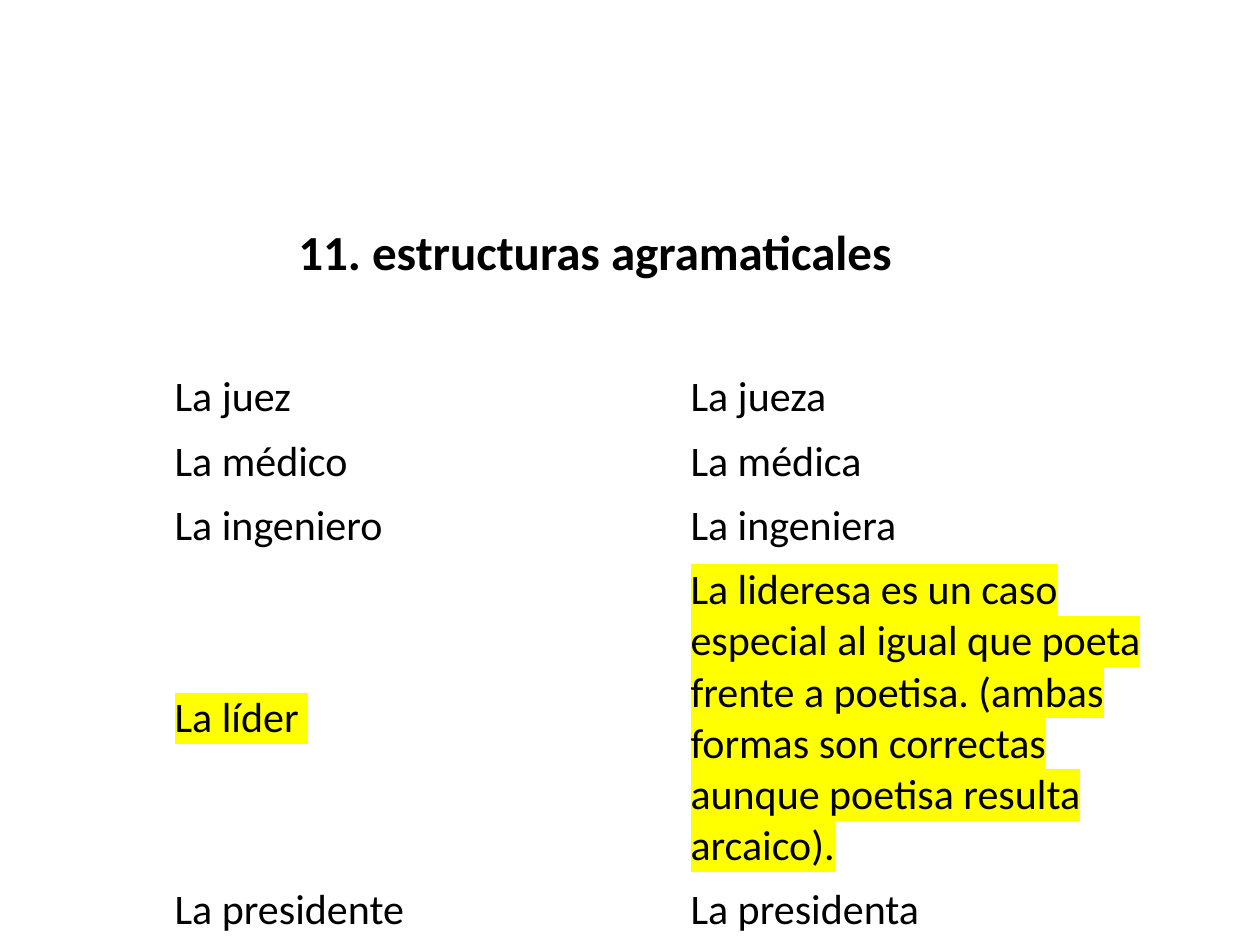
from dataclasses import dataclass

from lxml.etree import SubElement
from pptx import Presentation
from pptx.dml.color import RGBColor
from pptx.enum.text import MSO_ANCHOR, PP_ALIGN
from pptx.oxml.ns import qn
from pptx.util import Cm, Pt

COLORS = {"text": "000000", "highlight": "FFFF00"}
TITLE_FONT = {"name": "Calibri", "size": Pt(28), "bold": True}
CELL_FONT = {"name": "Calibri", "size": Pt(24), "bold": False}
CELL_FORMAT = {
    "vertical_anchor": MSO_ANCHOR.MIDDLE,
    "margin_left": Cm(0.25),
    "margin_right": Cm(0.25),
    "margin_top": Cm(0.13),
    "margin_bottom": Cm(0.13),
}
TITLE_BOX = {"left": Cm(1.3), "top": Cm(3.73), "width": Cm(21.39), "height": Cm(2.64)}
COLUMN_WIDTHS = (Cm(10.4), Cm(10.98))
EMPTY_ROW_HEIGHT = Cm(1.65)


@dataclass
class WordPair:
    common: str
    feminine: str
    height: float = 1.24
    highlighted: bool = False


WORD_PAIRS = [
    WordPair("La juez", "La jueza"),
    WordPair("La médico", "La médica"),
    WordPair("La ingeniero", "La ingeniera"),
    WordPair(
        "La líder ",
        "La lideresa es un caso especial al igual que poeta frente a poetisa. "
        "(ambas formas son correctas aunque poetisa resulta arcaico).",
        height=6.2,
        highlighted=True,
    ),
    WordPair("La presidente", "La presidenta"),
]


def set_attributes(target, values: dict) -> None:
    for attribute, value in values.items():
        setattr(target, attribute, value)


def add_run(paragraph, text: str, font_format: dict):
    run = paragraph.add_run()
    run.text = text
    run.font.color.rgb = RGBColor.from_string(COLORS["text"])
    set_attributes(run.font, font_format)
    return run


def highlight(run) -> None:
    properties = run.font._element
    mark = SubElement(properties, qn("a:highlight"))
    SubElement(mark, qn("a:srgbClr"), val=COLORS["highlight"])
    properties.find(qn("a:solidFill")).addnext(mark)


def fill_cell(cell, text: str, highlighted: bool) -> None:
    set_attributes(cell, CELL_FORMAT)
    paragraph = cell.text_frame.paragraphs[0]
    paragraph.level = 1
    properties = paragraph._p.get_or_add_pPr()
    properties.set("marL", str(Cm(1.27)))
    properties.set("indent", "0")
    run = add_run(paragraph, text, CELL_FONT)
    if highlighted:
        highlight(run)


def add_title(slide) -> None:
    title = slide.shapes.title
    set_attributes(title, TITLE_BOX)
    title.text_frame.vertical_anchor = MSO_ANCHOR.MIDDLE
    paragraph = title.text_frame.paragraphs[0]
    paragraph.alignment = PP_ALIGN.CENTER
    add_run(paragraph, "11. estructuras agramaticales", TITLE_FONT)


def add_word_table(slide, pairs: list[WordPair]) -> None:
    """Draw the pairs below an empty first row."""
    heights = [EMPTY_ROW_HEIGHT] + [Cm(pair.height) for pair in pairs]
    table = slide.shapes.add_table(
        len(heights), len(COLUMN_WIDTHS), Cm(2), Cm(5.72), sum(COLUMN_WIDTHS), sum(heights)
    ).table
    table.first_row = table.horz_banding = False
    for column, width in zip(table.columns, COLUMN_WIDTHS):
        column.width = width
    for row, height in zip(table.rows, heights):
        row.height = height
    for cell in table.iter_cells():
        cell.fill.background()
    for row_index, pair in enumerate(pairs, start=1):
        for column_index, text in enumerate((pair.common, pair.feminine)):
            fill_cell(table.cell(row_index, column_index), text, pair.highlighted)


def main() -> None:
    presentation = Presentation()
    presentation.slide_width, presentation.slide_height = Cm(25.4), Cm(19.05)
    slide = presentation.slides.add_slide(presentation.slide_layouts[5])
    add_title(slide)
    add_word_table(slide, WORD_PAIRS)
    presentation.save("out.pptx")


if __name__ == "__main__":
    main()
